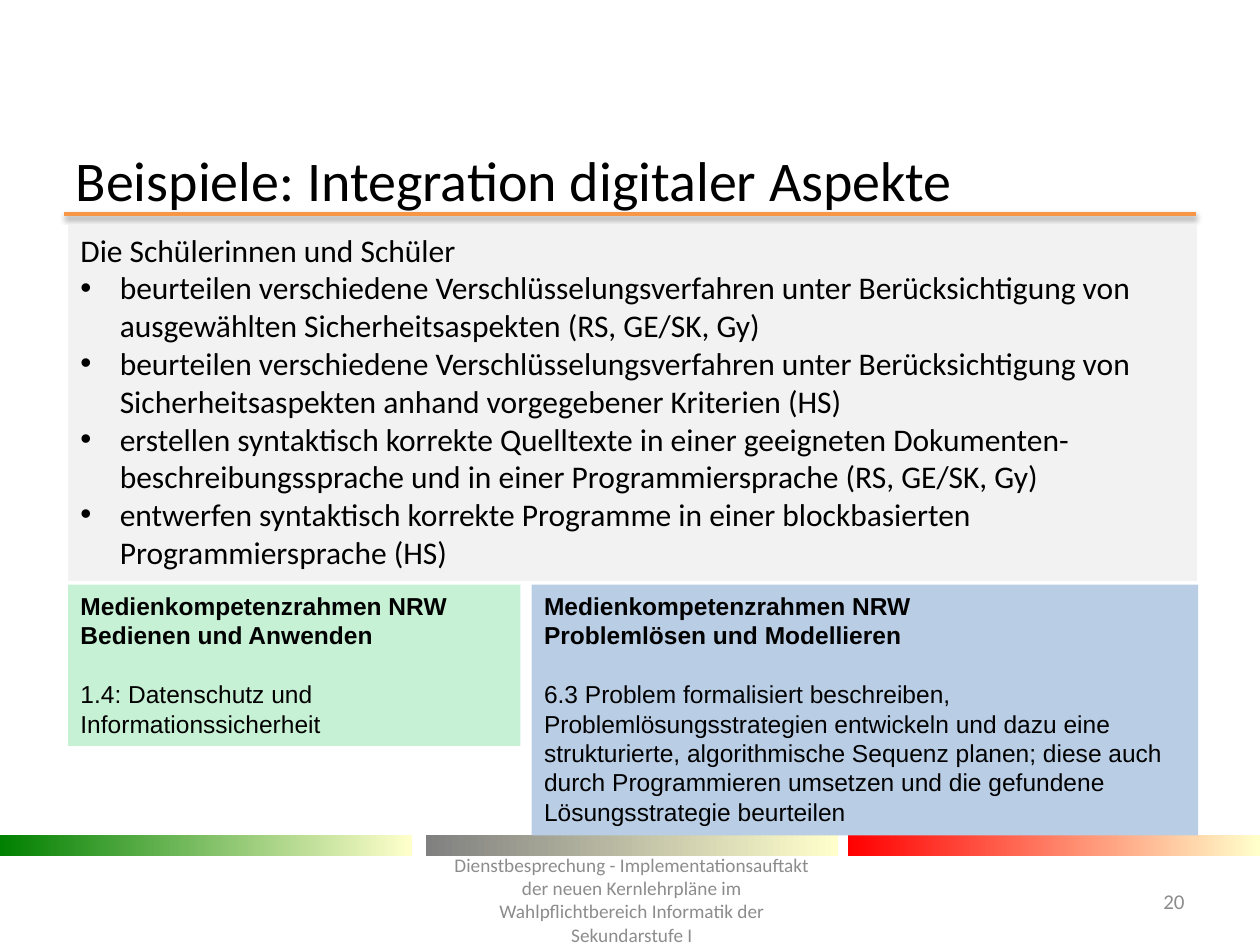
"""Build the slide on digital aspects in the computer science curriculum."""
from lxml import etree
from pptx import Presentation
from pptx.dml.color import RGBColor
from pptx.enum import shapes, text
from pptx.oxml import ns
from pptx.util import Pt

TITLE = "Beispiele: Integration digitaler Aspekte"
INTRO = "Die Schülerinnen und Schüler"
GOALS = [
    "beurteilen verschiedene Verschlüsselungsverfahren unter Berücksichtigung von "
    "ausgewählten Sicherheitsaspekten (RS, GE/SK, Gy)",
    "beurteilen verschiedene Verschlüsselungsverfahren unter Berücksichtigung von "
    "Sicherheitsaspekten anhand vorgegebener Kriterien (HS)",
    "erstellen syntaktisch korrekte Quelltexte in einer geeigneten "
    "Dokumenten-beschreibungssprache und in einer Programmiersprache (RS, GE/SK, Gy)",
    "entwerfen syntaktisch korrekte Programme in einer blockbasierten "
    "Programmiersprache (HS)",
]
FRAMEWORK = "Medienkompetenzrahmen NRW"
FRAMEWORK_PANELS = [
    ((38.9, 334.1, 258.5, 92.2), "C7F1D5", "Bedienen und Anwenden",
     "1.4: Datenschutz und Informationssicherheit"),
    ((303.8, 334.1, 380.9, 143.3), "B9CDE5", "Problemlösen und Modellieren",
     "6.3 Problem formalisiert beschreiben, Problemlösungsstrategien entwickeln und dazu "
     "eine strukturierte, algorithmische Sequenz planen; diese auch durch Programmieren "
     "umsetzen und die gefundene Lösungsstrategie beurteilen"),
]
FOOTER = ("Dienstbesprechung - Implementationsauftakt der neuen Kernlehrpläne im "
          "Wahlpflichtbereich Informatik der Sekundarstufe I")
PAGE_NUMBER = "20"
BARS = [(0, "008000"), (243.4, "808080"), (484.6, "FF0000")]
BAR_END = "FFFFCC"
BLACK, GREY = "000000", "8C8C8C"
LEFT, CENTER, RIGHT = text.PP_ALIGN.LEFT, text.PP_ALIGN.CENTER, text.PP_ALIGN.RIGHT


def color(value):
    return RGBColor.from_string(value)


def points(area):
    return [Pt(value) for value in area]


def write(para, words, size, name="Calibri", tint=BLACK, bold=False, align=LEFT):
    para.text = words
    para.alignment = align
    para.font.size, para.font.name, para.font.bold = Pt(size), name, bold
    para.font.color.rgb = color(tint)


def add_bullet(para, indent=22.5):
    properties = para._p.get_or_add_pPr()
    properties.set("marL", str(Pt(indent)))
    properties.set("indent", str(-Pt(indent)))
    etree.SubElement(properties, ns.qn("a:buFont"), typeface="Arial")
    etree.SubElement(properties, ns.qn("a:buChar"), char="•")


def add_rectangle(page, area):
    box = page.shapes.add_shape(shapes.MSO_SHAPE.RECTANGLE, *points(area))
    box.shadow.inherit = False
    box.line.fill.background()
    return box


def add_panel(page, area, fill):
    box = add_rectangle(page, area)
    box.fill.solid()
    box.fill.fore_color.rgb = color(fill)
    box.text_frame.word_wrap = True
    box.text_frame.vertical_anchor = text.MSO_ANCHOR.TOP
    return box.text_frame


def add_caption(page, area, words, size, align):
    frame = page.shapes.add_textbox(*points(area)).text_frame
    frame.word_wrap = True
    frame.vertical_anchor = text.MSO_ANCHOR.MIDDLE
    write(frame.paragraphs[0], words, size, tint=GREY, align=align)


def add_rule(page):
    rule = page.shapes.add_connector(
        shapes.MSO_CONNECTOR.STRAIGHT, *points((36.7, 122.4, 683.3, 122.4)))
    rule.line.color.rgb = color("F79646")
    rule.line.width = Pt(2)
    effects = etree.SubElement(rule._element.spPr, ns.qn("a:effectLst"))
    shadow = etree.SubElement(effects, ns.qn("a:outerShdw"), blurRad=str(Pt(3.1)),
                              dist=str(Pt(1.6)), dir="5400000", rotWithShape="0")
    tint = etree.SubElement(shadow, ns.qn("a:srgbClr"), val=BLACK)
    etree.SubElement(tint, ns.qn("a:alpha"), val="38000")


def add_bar(page, left, start):
    fill = add_rectangle(page, (left, 477.4, 235.4, 11.5)).fill
    fill.gradient()
    fill.gradient_angle = 0
    for stop, tint in zip(fill.gradient_stops, (start, BAR_END)):
        stop.color.rgb = color(tint)


def add_title(page):
    title = page.shapes.title
    title.left, title.top, title.width, title.height = points((36, 88.6, 648, 28))
    frame = title.text_frame
    frame.auto_size = text.MSO_AUTO_SIZE.NONE
    frame.vertical_anchor = text.MSO_ANCHOR.MIDDLE
    write(frame.paragraphs[0], TITLE, 32)


def add_goals(page):
    frame = add_panel(page, (38.9, 128.2, 645.1, 203.8), "F2F2F2")
    write(frame.paragraphs[0], INTRO, 18)
    for goal in GOALS:
        para = frame.add_paragraph()
        add_bullet(para)
        write(para, goal, 18)


def add_framework(page, area, fill, field, skill):
    frame = add_panel(page, area, fill)
    write(frame.paragraphs[0], FRAMEWORK, 14, "Arial", bold=True)
    write(frame.add_paragraph(), field, 14, "Arial", bold=True)
    para = frame.add_paragraph()
    para.space_before = Pt(16.8)
    write(para, skill, 14, "Arial")


def main():
    deck = Presentation()
    deck.slide_width, deck.slide_height = Pt(720), Pt(540)
    page = deck.slides.add_slide(deck.slide_layouts[5])
    add_rule(page)
    for left, start in BARS:
        add_bar(page, left, start)
    add_title(page)
    add_caption(page, (637.9, 500.4, 46.1, 28.8), PAGE_NUMBER, 12, RIGHT)
    add_goals(page)
    for panel in FRAMEWORK_PANELS:
        add_framework(page, *panel)
    add_caption(page, (250.6, 489.6, 221, 49), FOOTER, 11, CENTER)
    deck.save("out.pptx")


if __name__ == "__main__":
    main()
